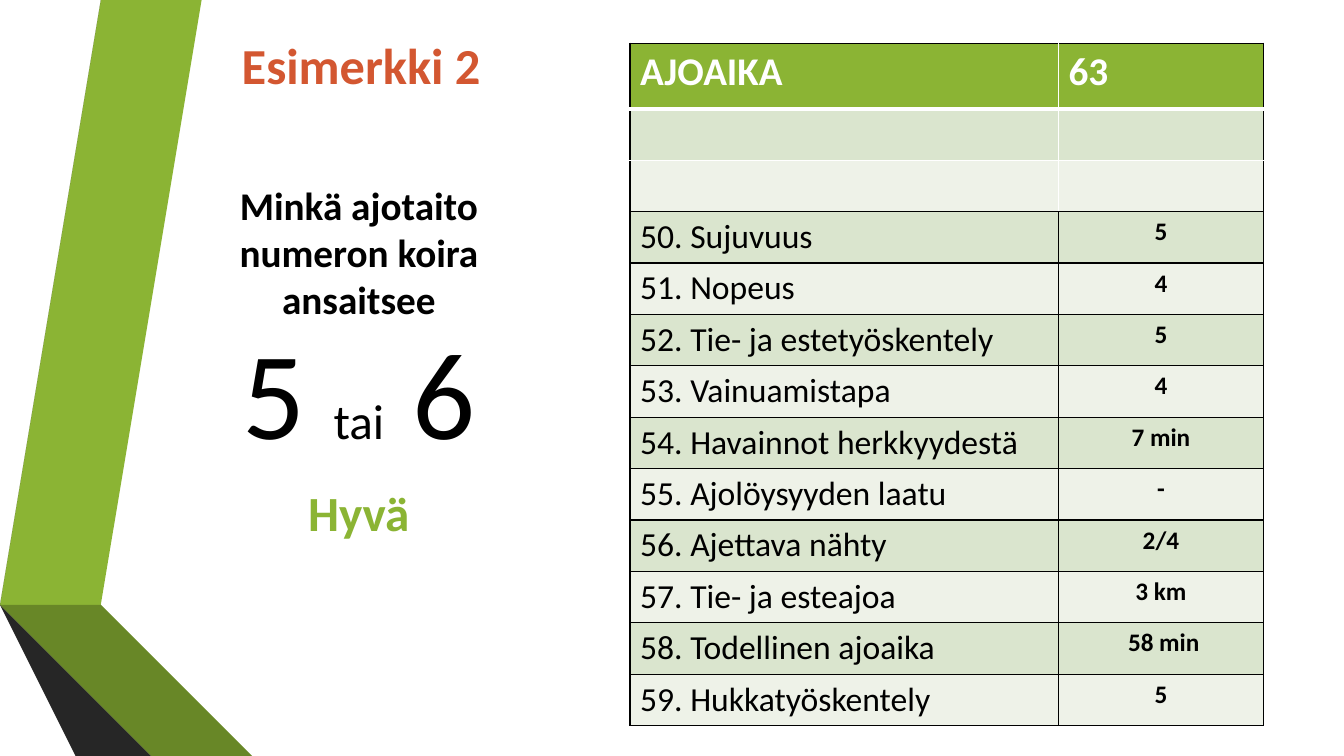
from lxml import etree
from pptx import Presentation
from pptx.dml.color import RGBColor
from pptx.enum.text import MSO_ANCHOR, MSO_AUTO_SIZE, PP_ALIGN
from pptx.oxml.ns import qn
from pptx.util import Inches, Pt

LEFT, CENTER = PP_ALIGN.LEFT, PP_ALIGN.CENTER
TOP, MIDDLE, BOTTOM = MSO_ANCHOR.TOP, MSO_ANCHOR.MIDDLE, MSO_ANCHOR.BOTTOM
GROW = MSO_AUTO_SIZE.SHAPE_TO_FIT_TEXT

SLIDE_W, SLIDE_H = Inches(13.33), Inches(7.5)
FONT = "Calibri"
BLACK, WHITE, GREEN, ORANGE = "000000", "FFFFFF", "8BB434", "D35731"
BANDS = ("DAE5CE", "EEF2E8")

# Ribbon outlines in inches, from back to front
RIBBONS = [
    (GREEN, [(0.5, 5.78), (0.77, 5.83), (1.73, 0), (1.45, 0)]),
    ("595959", [(1.39, 0), (1.11, 0), (0.16, 5.73), (0.44, 5.77)]),
    ("262626", [(0.16, 5.73), (1.45, 7.5), (1.51, 7.5)]),
    ("465A1A", [(0.5, 5.79), (2.08, 7.5), (2.14, 7.5)]),
    ("688727", [(0.5, 5.78), (2.14, 7.5), (2.83, 7.5), (0.77, 5.83)]),
    ("404040", [(2.02, 7.5), (0.48, 5.83), (0.44, 5.77), (0.16, 5.73), (1.51, 7.5)]),
]

DRIVE_ROWS = [
    ("AJOAIKA", "63"),
    ("", ""),
    ("", ""),
    ("50. Sujuvuus", "5"),
    ("51. Nopeus", "4"),
    ("52. Tie- ja estetyöskentely", "5"),
    ("53. Vainuamistapa", "4"),
    ("54. Havainnot herkkyydestä", "7 min"),
    ("55. Ajolöysyyden laatu", "-"),
    ("56. Ajettava nähty", "2/4"),
    ("57. Tie- ja esteajoa", "3 km"),
    ("58. Todellinen ajoaika", " 58 min"),
    ("59. Hukkatyöskentely", "5"),
]
HEADER_HEIGHT, ROW_HEIGHT = Inches(0.65), Inches(0.51)
FIRST_SCORE_ROW = 3


def color(hex_text):
    return RGBColor.from_string(hex_text)


def area(left, top, width, height):
    """Turn percentages of the slide into lengths."""
    return (int(SLIDE_W * left / 100), int(SLIDE_H * top / 100),
            int(SLIDE_W * width / 100), int(SLIDE_H * height / 100))


def add_run(paragraph, text, size=24, hex_text=BLACK, bold=False, align=LEFT):
    paragraph.alignment = align
    run = paragraph.add_run()
    run.text = text
    run.font.name = FONT
    run.font.size = Pt(size)
    run.font.bold = bold
    run.font.color.rgb = color(hex_text)


def set_frame(shape, anchor):
    frame = shape.text_frame
    frame.word_wrap = True
    frame.vertical_anchor = anchor
    return frame


def add_ribbon(slide, hex_text, points):
    builder = slide.shapes.build_freeform(*points[0], scale=Inches(1))
    builder.add_line_segments(points[1:], close=True)
    ribbon = builder.convert_to_shape()
    ribbon.shadow.inherit = False
    ribbon.fill.solid()
    ribbon.fill.fore_color.rgb = color(hex_text)
    ribbon.line.fill.background()


def add_question(slide):
    question = slide.shapes.title
    question.left, question.top, question.width, question.height = area(12.15, 23.33, 29.1, 20)
    frame = set_frame(question, BOTTOM)
    add_run(frame.paragraphs[0], "Minkä ajotaito numeron koira ansaitsee",
            size=28, bold=True, align=CENTER)


def add_answer(slide):
    answer = slide.shapes.add_textbox(*area(12.15, 43.33, 29.1, 26.67))
    frame = set_frame(answer, MIDDLE)
    scores, verdict = frame.paragraphs[0], frame.add_paragraph()
    for text, size in (("5 ", 88.8), ("tai", 35.1), (" 6", 88.8)):
        add_run(scores, text, size=size, align=CENTER)
    add_run(verdict, "Hyvä", size=35.1, hex_text=GREEN, bold=True, align=CENTER)
    for paragraph in frame.paragraphs:
        paragraph.space_before, paragraph.space_after = Pt(7), Pt(6)


def add_example_heading(slide):
    heading = slide.shapes.add_textbox(*area(17.25, 3.87, 25.27, 9.47))
    frame = set_frame(heading, TOP)
    frame.auto_size = GROW
    add_run(frame.paragraphs[0], "Esimerkki 2", size=36, hex_text=ORANGE, bold=True)


def set_border(cell, side, hex_text, width):
    line = etree.SubElement(cell._tc.get_or_add_tcPr(), qn(f"a:ln{side}"), w=str(Pt(width)))
    fill = etree.SubElement(line, qn("a:solidFill"))
    etree.SubElement(fill, qn("a:srgbClr"), val=hex_text)


def horizontal_rule(index):
    """Colour and width of the line above the row with this index."""
    if index == 1:
        return WHITE, 3
    return (WHITE if index == 2 else BLACK), 1


def format_cell(cell, row, column):
    # Borders: white inside the header block, black elsewhere
    divider = (WHITE if row < FIRST_SCORE_ROW else BLACK), 1
    outer = BLACK, 1
    set_border(cell, "L", *(divider if column else outer))
    set_border(cell, "R", *(outer if column else divider))
    set_border(cell, "T", *horizontal_rule(row))
    set_border(cell, "B", *horizontal_rule(row + 1))
    cell.fill.solid()
    cell.fill.fore_color.rgb = color(BANDS[(row - 1) % 2] if row else GREEN)


def add_drive_table(slide):
    frame = slide.shapes.add_table(len(DRIVE_ROWS), 2, *area(46.88, 5.73, 47.1, 88.67))
    table = frame.table
    table.columns[0].width, table.columns[1].width = Inches(4.25), Inches(2.03)
    for row, texts in enumerate(DRIVE_ROWS):
        table.rows[row].height = ROW_HEIGHT if row else HEADER_HEIGHT
        for column, text in enumerate(texts):
            cell = table.cell(row, column)
            format_cell(cell, row, column)
            if not text:
                continue
            paragraph = cell.text_frame.paragraphs[0]
            if row == 0:
                add_run(paragraph, text, size=28, hex_text=WHITE, bold=True)
            elif column == 0:
                add_run(paragraph, text)
            else:
                add_run(paragraph, text, size=18, bold=True, align=CENTER)


def main():
    deck = Presentation()
    deck.slide_width, deck.slide_height = SLIDE_W, SLIDE_H
    slide = deck.slides.add_slide(deck.slide_layouts[5])
    # Decoration
    for hex_text, points in RIBBONS:
        add_ribbon(slide, hex_text, points)
    # Content
    add_question(slide)
    add_drive_table(slide)
    add_answer(slide)
    add_example_heading(slide)
    deck.save("out.pptx")


if __name__ == "__main__":
    main()
